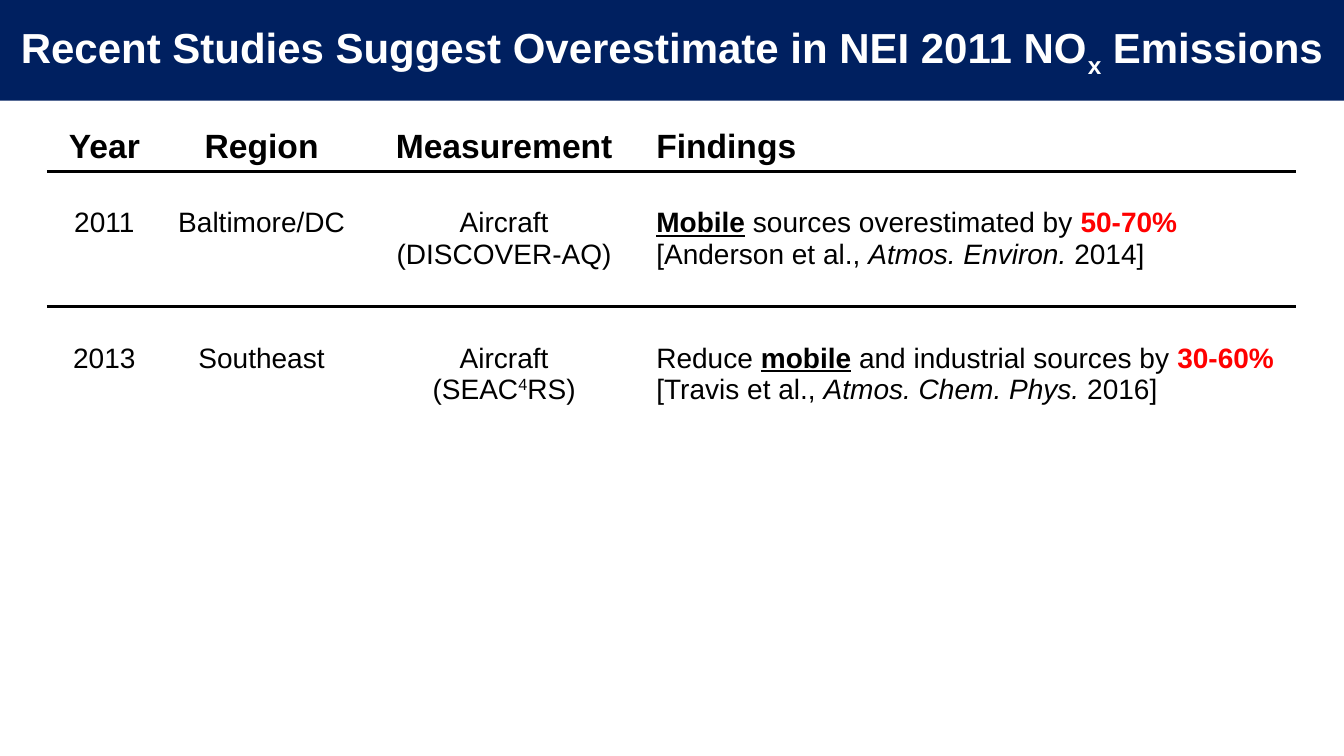
"""Build a slide that tabulates studies of NOx emission overestimates."""
from lxml import etree
from pptx import Presentation
from pptx.dml.color import RGBColor
from pptx.enum.shapes import MSO_SHAPE
from pptx.enum.text import MSO_ANCHOR, PP_ALIGN
from pptx.oxml.ns import qn
from pptx.util import Inches, Pt

RECTANGLE = MSO_SHAPE.RECTANGLE
MIDDLE = MSO_ANCHOR.MIDDLE
CENTER, LEFT = PP_ALIGN.CENTER, PP_ALIGN.LEFT

COLORS = {"banner": "002060", "title": "FFFFFF", "text": "000000", "alert": "FF0000"}
SLIDE_WIDTH, SLIDE_HEIGHT = 13.33, 7.5
BANNER_HEIGHT = 1
TABLE_LEFT, TABLE_TOP = 0.47, 1.22
COLUMN_WIDTHS = [1.13, 1.99, 2.82, 6.44]
ROW_HEIGHTS = [0.48, 1.34, 1.55]
HEADER_MARGIN, STUDY_MARGIN = 0.05, 0.36
RULE_POINTS = 3

TITLE = {"size": Pt(30), "bold": True, "color": "title"}
HEADER = {"size": Pt(24), "bold": True, "color": "text"}
BODY = {"size": Pt(20), "bold": False, "color": "text"}
KEYWORD = {"bold": True, "underline": True}
SHARE = {"bold": True, "color": "alert"}
JOURNAL = {"italic": True}
SUBSCRIPT = {"baseline": -25}
SUPERSCRIPT = {"baseline": 30}

HEADLINE = [[("Recent Studies Suggest Overestimate in NEI 2011 NO", {}),
             ("x", SUBSCRIPT), (" Emissions", {})]]
HEADINGS = ["Year", "Region", "Measurement", "Findings"]
STUDIES = [
    ["2011", "Baltimore/DC",
     [[("Aircraft", {})], [("(DISCOVER-AQ)", {})]],
     [[("Mobile", KEYWORD), (" sources overestimated by ", {}), ("50-70%", SHARE)],
      [("[Anderson et al., ", {}), ("Atmos. Environ.", JOURNAL), (" 2014]", {})]]],
    ["2013", "Southeast",
     [[("Aircraft", {})], [("(SEAC", {}), ("4", SUPERSCRIPT), ("RS)", {})]],
     [[("Reduce ", {}), ("mobile", KEYWORD), (" and industrial sources by ", {}),
       ("30-60%", SHARE), (" [Travis et al., ", {}),
       ("Atmos. Chem. Phys.", JOURNAL), (" 2016]", {})]]],
]


def color(name):
    """Return the named colour."""
    return RGBColor.from_string(COLORS[name])


def add_run(paragraph, words, style):
    """Append words formatted by a dict of format values."""
    run = paragraph.add_run()
    run.text = words
    run.font.name = "Arial"
    for key, value in style.items():
        if key == "color":
            run.font.color.rgb = color(value)
        elif key == "baseline":
            run.font._element.set("baseline", str(value * 1000))
        else:
            setattr(run.font, key, value)


def write_lines(frame, lines, base, alignment):
    """Write a plain string or lists of styled runs, one paragraph a line."""
    if isinstance(lines, str):
        lines = [[(lines, {})]]
    for index, line in enumerate(lines):
        paragraph = frame.add_paragraph() if index else frame.paragraphs[0]
        paragraph.alignment = alignment
        for words, style in line:
            add_run(paragraph, words, {**base, **style})


def add_banner(slide):
    """Draw the full-width title band."""
    banner = slide.shapes.add_shape(
        RECTANGLE, 0, 0, Inches(SLIDE_WIDTH), Inches(BANNER_HEIGHT))
    banner.shadow.inherit = False
    banner.fill.solid()
    banner.fill.fore_color.rgb = color("banner")
    banner.line.fill.background()
    frame = banner.text_frame
    frame.word_wrap = True
    frame.vertical_anchor = MIDDLE
    write_lines(frame, HEADLINE, TITLE, CENTER)


def rule_edge(cell, edge):
    """Draw a rule along one edge of a cell."""
    rule = etree.Element(qn(f"a:{edge}"), w=str(Pt(RULE_POINTS)))
    fill = etree.SubElement(rule, qn("a:solidFill"))
    etree.SubElement(fill, qn("a:srgbClr"), val=COLORS["text"])
    cell._tc.get_or_add_tcPr().insert(0, rule)


def add_studies(slide):
    """Lay out the studies under ruled headings."""
    rows = [HEADINGS, *STUDIES]
    table = slide.shapes.add_table(
        len(rows), len(HEADINGS), Inches(TABLE_LEFT), Inches(TABLE_TOP),
        Inches(sum(COLUMN_WIDTHS)), Inches(sum(ROW_HEIGHTS))).table
    table.first_row = table.horz_banding = False
    for column, width in zip(table.columns, COLUMN_WIDTHS):
        column.width = Inches(width)
    for row_index, (row, height) in enumerate(zip(rows, ROW_HEIGHTS)):
        table.rows[row_index].height = Inches(height)
        for column_index, lines in enumerate(row):
            cell = table.cell(row_index, column_index)
            cell.fill.background()
            cell.margin_top = Inches(STUDY_MARGIN if row_index else HEADER_MARGIN)
            alignment = LEFT if HEADINGS[column_index] == "Findings" else CENTER
            write_lines(cell.text_frame, lines, BODY if row_index else HEADER, alignment)
            if row_index < 2:
                rule_edge(cell, "lnT" if row_index else "lnB")


def main():
    """Build and save the slide."""
    deck = Presentation()
    deck.slide_width, deck.slide_height = Inches(SLIDE_WIDTH), Inches(SLIDE_HEIGHT)
    slide = deck.slides.add_slide(deck.slide_layouts[6])
    add_banner(slide)
    add_studies(slide)
    deck.save("out.pptx")


if __name__ == "__main__":
    main()
